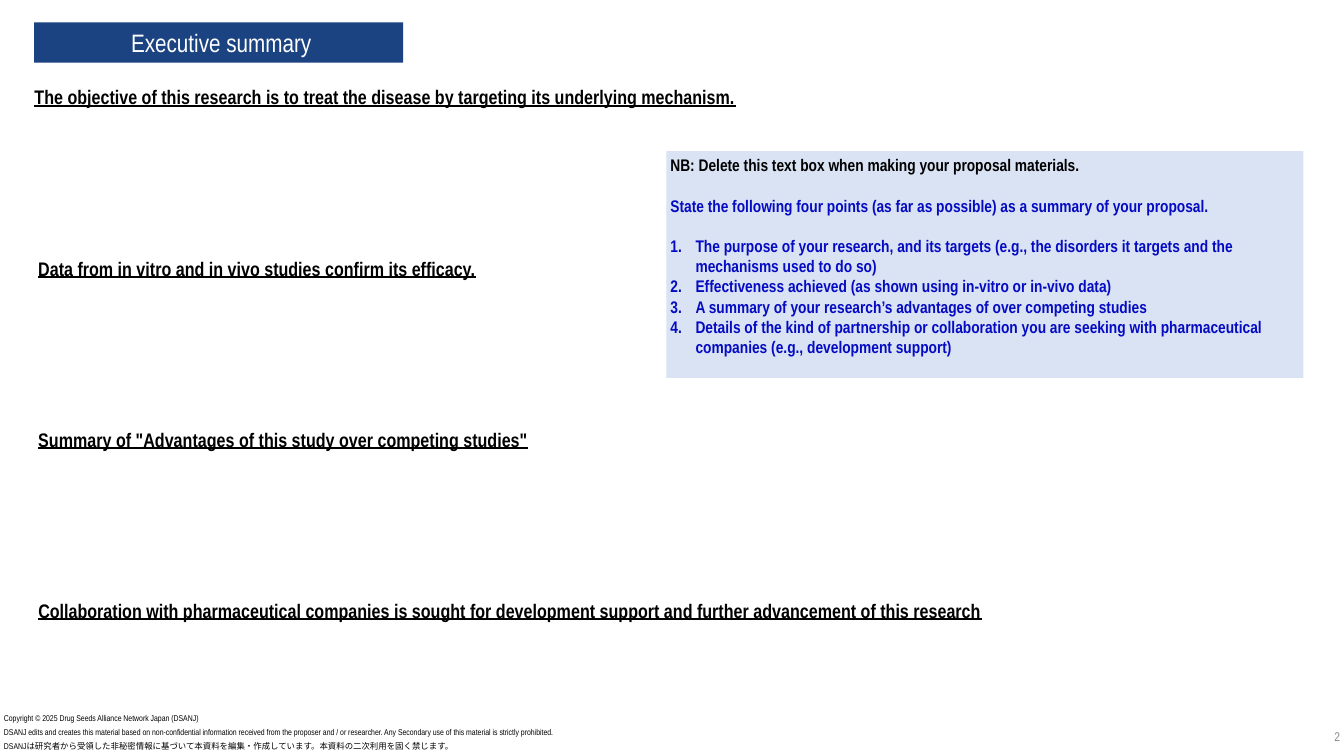
from dataclasses import dataclass

from lxml.etree import SubElement
from pptx import Presentation
from pptx.dml.color import RGBColor
from pptx.enum.shapes import MSO_SHAPE as Shape
from pptx.enum.text import MSO_ANCHOR as Anchor, PP_ALIGN as Align
from pptx.oxml.ns import qn
from pptx.util import Pt


@dataclass(frozen=True)
class Theme:
    font: str = "Arial Narrow"
    navy: str = "1B4281"
    pale: str = "DAE3F3"
    blue: str = "040BC2"
    black: str = "000000"
    white: str = "FFFFFF"
    grey: str = "898989"
    title: int = 18
    heading: int = 14
    note: int = 12
    number: int = 9
    legal: int = 6


theme = Theme()
deck = Presentation()
deck.slide_width, deck.slide_height = Pt(960), Pt(540)
page = deck.slides.add_slide(deck.slide_layouts[6])


def add_box(left, top, width, height, anchor=Anchor.MIDDLE, fill=None):
    area = [Pt(value) for value in (left, top, width, height)]
    if fill:
        box = page.shapes.add_shape(Shape.RECTANGLE, *area)
        box.shadow.inherit = False
        box.fill.solid()
        box.fill.fore_color.rgb = RGBColor.from_string(fill)
        box.line.fill.background()
    else:
        box = page.shapes.add_textbox(*area)
    frame = box.text_frame
    frame.word_wrap = True
    frame.vertical_anchor = anchor
    frame.margin_left = frame.margin_right = Pt(2.83)
    frame.margin_top = frame.margin_bottom = Pt(2.83)
    return frame


def style(para, size, color, align=Align.LEFT, bold=False, underline=False):
    para.alignment = align
    for span in para.runs:
        span.font.name = theme.font
        span.font.size = Pt(size)
        span.font.color.rgb = RGBColor.from_string(color)
        span.font.bold = bold
        span.font.underline = underline


banner = add_box(24.5, 16, 263.5, 28.8, fill=theme.navy)
banner.margin_left = Pt(6.5)
banner.text = "Executive summary"
style(banner.paragraphs[0], theme.title, theme.white, Align.CENTER)

legal_lines = [
    (506.9, 202, "Copyright © 2025 Drug Seeds Alliance Network Japan (DSANJ)"),
    (516.2, 556, "DSANJ edits and creates this material based on non-confidential information received "
                 "from the proposer and / or researcher. Any Secondary use of this material is strictly prohibited."),
    (526.3, 400, "DSANJは研究者から受領した非秘密情報に基づいて本資料を編集・作成しています。"
                 "本資料の二次利用を固く禁じます。"),
]
for index, (top, width, text) in enumerate(legal_lines):
    legal = add_box(0, top, width, 14.4, Anchor.TOP)
    legal.text = text
    style(legal.paragraphs[0], theme.legal, theme.black)
    if index:
        legal.paragraphs[0].line_spacing = Pt(7.2)

points = [
    "The purpose of your research, and its targets (e.g., the disorders it targets and the mechanisms used to do so)",
    "Effectiveness achieved (as shown using in-vitro or in-vivo data)",
    "A summary of your research’s advantages of over competing studies",
    "Details of the kind of partnership or collaboration you are seeking with pharmaceutical companies "
    "(e.g., development support)",
]
guide_lines = [
    "NB: Delete this text box when making your proposal materials.",
    "State the following four points (as far as possible) as a summary of your proposal.",
    *points,
]
guide = add_box(476, 108, 455, 162, Anchor.TOP, theme.pale)
guide.text = "\n".join(guide_lines)
for index, para in enumerate(guide.paragraphs):
    if index >= 2:
        props = para._p.get_or_add_pPr()
        props.set("marL", str(Pt(18)))
        props.set("indent", str(Pt(-18)))
        SubElement(props, qn("a:buFont"), typeface="+mj-lt")
        SubElement(props, qn("a:buAutoNum"), type="arabicPeriod")
    if index in (1, 2):
        para.space_before = Pt(14.4)
    style(para, theme.note, theme.blue if index else theme.black, bold=True)

number = add_box(792, 512.6, 168, 26.6)
number.text = "2"
style(number.paragraphs[0], theme.number, theme.grey, Align.RIGHT)

headings = [
    (21.8, 701, "The objective of this research is to treat the disease by targeting its underlying mechanism."),
    (24.5, 701, "Data from in vitro and in vivo studies confirm its efficacy."),
    (24.5, 701, 'Summary of "Advantages of this study over competing studies"'),
    (24.5, 935, "Collaboration with pharmaceutical companies is sought for development support "
                "and further advancement of this research"),
]
for index, (left, width, text) in enumerate(headings):
    heading = add_box(left, 55 + index * 122.2, width, 28.8)
    heading.text = text
    style(heading.paragraphs[0], theme.heading, theme.black, bold=True, underline=True)

deck.save("out.pptx")
